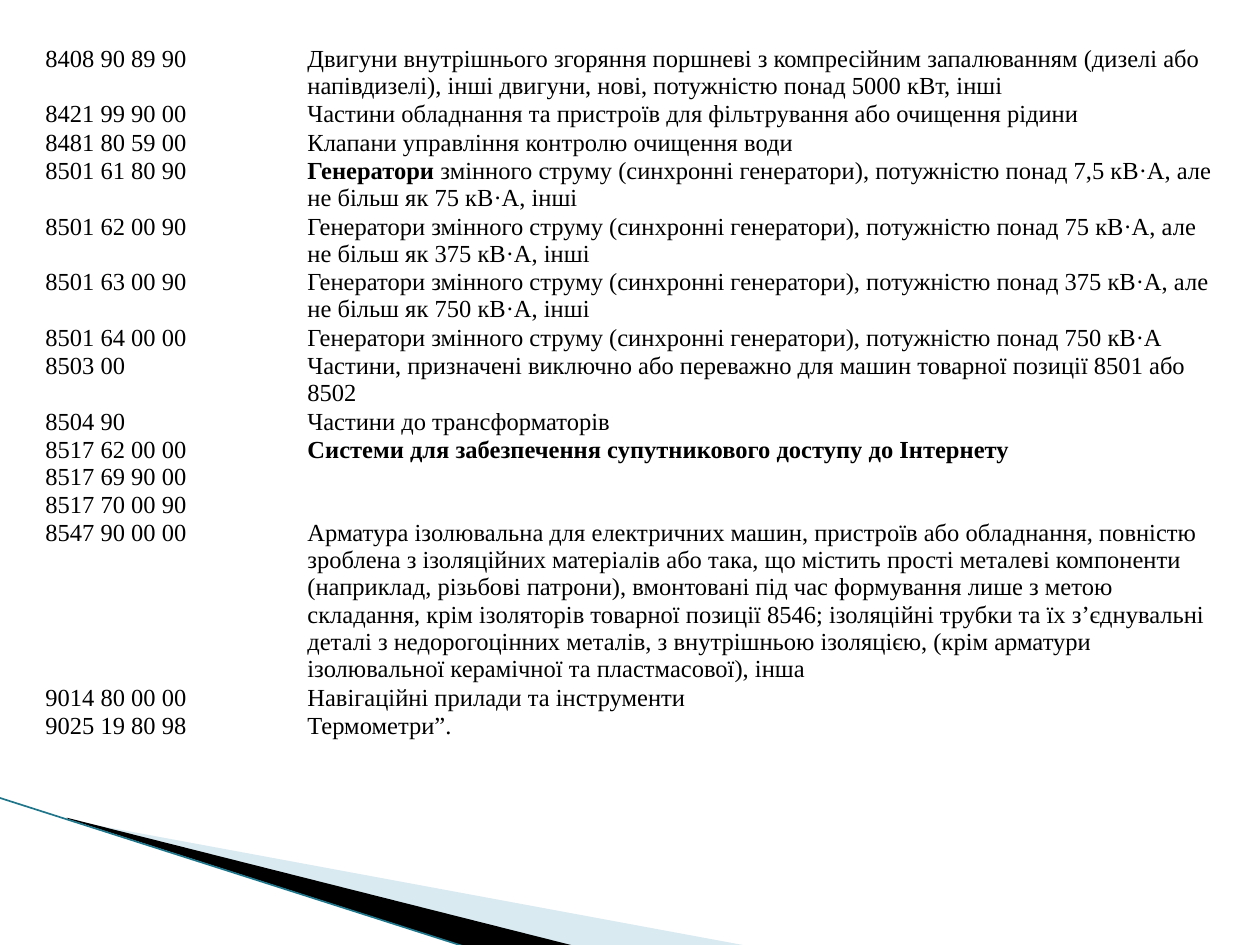
import pptx
import pptx.dml.color
import pptx.enum.shapes
import pptx.enum.text
import pptx.oxml
import pptx.oxml.ns
import pptx.util
from dataclasses import dataclass
from pptx.util import Inches


@dataclass(frozen=True)
class Theme:
    font: str = "Times New Roman"
    size: int = 14
    text: str = "000000"
    paper: str = "FFFFFF"
    pale: str = "A0CBDC"
    dark: str = "000000"
    edge: str = "1F768B"


theme = Theme()
color = pptx.dml.color.RGBColor.from_string


def add_text(para, text, bold=False, size=theme.size, font=theme.font, ink=theme.text):
    for index, line in enumerate(text.split("\n")):
        if index:
            para.add_line_break()
        span = para.add_run()
        span.text = line
        span.font.name = font
        span.font.size = pptx.util.Pt(size)
        span.font.bold = bold
        span.font.color.rgb = color(ink)


def add_element(parent, xml, position):
    element = pptx.oxml.parse_xml(xml.replace(">", f" {pptx.oxml.ns.nsdecls('a')}>", 1))
    parent.insert(position, element)


deck = pptx.Presentation()
deck.slide_width = Inches(10)
deck.slide_height = Inches(7.5)
page = deck.slides.add_slide(deck.slide_layouts[6])

wedges = [
    ([(0.55, 6.51), (5.95, 7.51), (4.56, 7.51), (0.55, 6.5)], theme.pale, 40),
    ([(0.53, 6.49), (4.57, 7.51), (3.72, 7.52), (0.54, 6.5)], theme.dark, 100),
]
for points, fill, opacity in wedges:
    corners = [(Inches(x), Inches(y)) for x, y in points]
    builder = page.shapes.build_freeform(*corners[0], scale=1.0)
    builder.add_line_segments(corners[1:], close=True)
    wedge = builder.convert_to_shape()
    wedge.shadow.inherit = False
    wedge.line.fill.background()
    wedge.fill.solid()
    wedge.fill.fore_color.rgb = color(fill)
    if opacity < 100:
        tint = wedge.fill._xPr.find(".//" + pptx.oxml.ns.qn("a:srgbClr"))
        add_element(tint, f'<a:alpha val="{opacity * 1000}" ></a:alpha>', 0)

edge = page.shapes.add_connector(
    pptx.enum.shapes.MSO_CONNECTOR.STRAIGHT,
    Inches(-0.01), Inches(6.33), Inches(3.71), Inches(7.52))
edge.line.color.rgb = color(theme.edge)
edge.line.width = pptx.util.Pt(0.95)
properties = edge._element.spPr
add_element(properties, "<a:effectLst></a:effectLst>", len(properties))

generators = "змінного струму (синхронні генератори), потужністю понад"
goods = [
    ("8408 90 89 90", "", "Двигуни внутрішнього згоряння поршневі з компресійним запалюванням "
     "(дизелі або напівдизелі), інші двигуни, нові, потужністю понад 5000 кВт, інші", 2),
    ("8421 99 90 00", "", "Частини обладнання та пристроїв для фільтрування або очищення рідини", 1),
    ("8481 80 59 00", "", "Клапани управління контролю очищення води", 1),
    ("8501 61 80 90", "Генератори", f" {generators} 7,5 кВ·А, але не більш як 75 кВ·А, інші", 2),
    ("8501 62 00 90", "", f"Генератори {generators} 75 кВ·А, але не більш як 375 кВ·А, інші", 2),
    ("8501 63 00 90", "", f"Генератори {generators} 375 кВ·А, але не більш як 750 кВ·А, інші", 2),
    ("8501 64 00 00", "", f"Генератори {generators} 750 кВ·А", 1),
    ("8503 00", "", "Частини, призначені виключно або переважно для машин "
     "товарної позиції 8501 або 8502", 2),
    ("8504 90", "", "Частини до трансформаторів", 1),
    ("8517 62 00 00\n8517 69 90 00\n8517 70 00 90",
     "Cистеми для забезпечення супутникового доступу до Інтернету", "", 3),
    ("8547 90 00 00", "", "Арматура ізолювальна для електричних машин, пристроїв або обладнання, "
     "повністю зроблена з ізоляційних матеріалів або така, що містить прості металеві компоненти "
     "(наприклад, різьбові патрони), вмонтовані під час формування лише з метою складання, "
     "крім ізоляторів товарної позиції 8546; ізоляційні трубки та їх з’єднувальні деталі "
     "з недорогоцінних металів, з внутрішньою ізоляцією, (крім арматури ізолювальної "
     "керамічної та пластмасової), інша", 6),
    ("9014 80 00 00", "", "Навігаційні прилади та інструменти", 1),
    ("9025 19 80 98", "", "Термометри”.", 1),
]
line_height = 1.11 * theme.size / 72
row_gap = 0.01
total_height = sum(lines * line_height + row_gap for *_, lines in goods)
table = page.shapes.add_table(
    len(goods), 2, Inches(0.35), Inches(0.36), Inches(9.37), Inches(total_height)).table
table.first_row = False
table.horz_banding = False
for column, width in zip(table.columns, (2.08, 7.29)):
    column.width = Inches(width)

for row, (code, lead, description, lines) in zip(table.rows, goods):
    row.height = Inches(lines * line_height + row_gap)
    for cell, parts in zip(row.cells, ([(code, False)], [(lead, True), (description, False)])):
        cell.margin_left = cell.margin_right = Inches(0.01)
        cell.margin_top = cell.margin_bottom = Inches(0)
        cell.vertical_anchor = pptx.enum.text.MSO_ANCHOR.TOP
        cell.fill.solid()
        cell.fill.fore_color.rgb = color(theme.paper)
        for position, side in enumerate("LRTB"):
            add_element(
                cell._tc.get_or_add_tcPr(),
                f'<a:ln{side} w="9525"><a:solidFill><a:srgbClr val="{theme.paper}"/>'
                f"</a:solidFill></a:ln{side}>", position)
        para = cell.text_frame.paragraphs[0]
        for text, bold in parts:
            if text:
                add_text(para, text, bold=bold)

deck.save("out.pptx")
